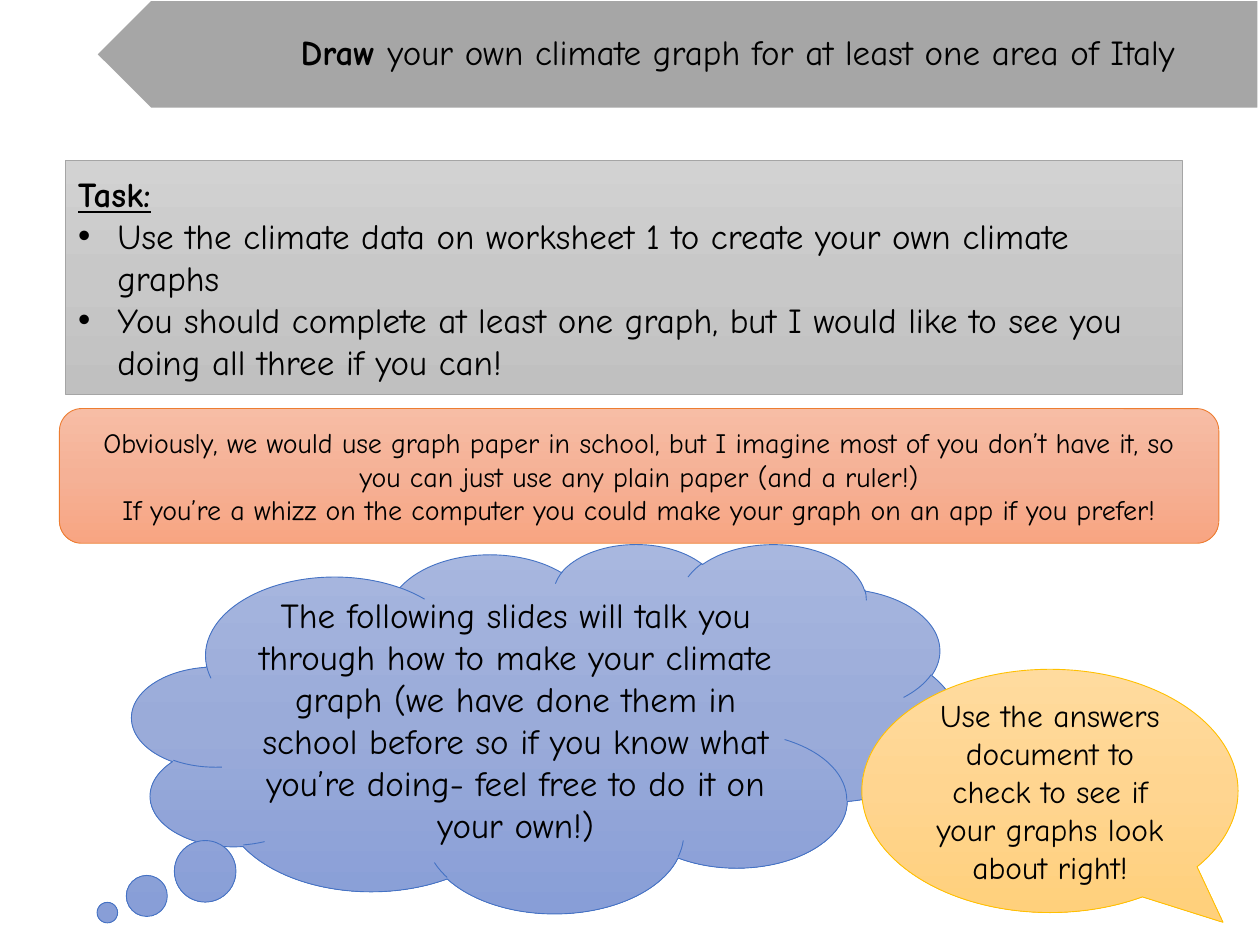
from copy import deepcopy

from lxml import etree
from pptx import Presentation
from pptx.dml.color import RGBColor
from pptx.enum import shapes, text
from pptx.oxml import ns
from pptx.util import Pt

FONT = "Comic Neue"
BLACK = RGBColor(0x00, 0x00, 0x00)
WHITE = RGBColor(0xFF, 0xFF, 0xFF)
BANNER_GREY = RGBColor(0xA6, 0xA6, 0xA6)
GREY_LINE = RGBColor(0xA5, 0xA5, 0xA5)
GREY_STOPS = (RGBColor(0xD2, 0xD2, 0xD2), RGBColor(0xC8, 0xC8, 0xC8), RGBColor(0xC0, 0xC0, 0xC0))
BLUE_LINE = RGBColor(0x44, 0x72, 0xC4)
BLUE_STOPS = (RGBColor(0xA8, 0xB7, 0xDF), RGBColor(0x9A, 0xAB, 0xD9), RGBColor(0x88, 0x9E, 0xD7))
ORANGE_LINE = RGBColor(0xED, 0x7D, 0x31)
ORANGE_STOPS = (RGBColor(0xF7, 0xBD, 0xA5), RGBColor(0xF5, 0xB1, 0x96), RGBColor(0xF8, 0xA5, 0x82))
GOLD_LINE = RGBColor(0xFF, 0xC0, 0x00)
GOLD_STOPS = (RGBColor(0xFF, 0xDB, 0x9E), RGBColor(0xFF, 0xD5, 0x90), RGBColor(0xFF, 0xD0, 0x7C))


def add_run(paragraph, words, size, bold=False, underline=False):
    run = paragraph.add_run()
    run.text = words
    font = run.font
    font.name, font.size, font.bold, font.underline = FONT, Pt(size), bold, underline
    font.color.rgb = BLACK


def add_panel(slide, preset, box, line, line_width=0.5):
    panel = slide.shapes.add_shape(preset, *map(Pt, box))
    panel.shadow.inherit = False
    panel.line.color.rgb = line
    panel.line.width = Pt(line_width)
    return panel


def shade(panel, colours):
    panel.fill.gradient()
    panel.fill.gradient_angle = 270
    first = panel.element.find(".//" + ns.qn("a:gs"))
    first.addnext(deepcopy(first))
    for stop, position, colour in zip(panel.fill.gradient_stops, (0, 0.5, 1), colours):
        stop.position = position
        stop.color.rgb = colour


def write_lines(panel, lines, size):
    frame = panel.text_frame
    frame.word_wrap = True
    frame.vertical_anchor = text.MSO_ANCHOR.MIDDLE
    for index, words in enumerate(lines):
        paragraph = frame.add_paragraph() if index else frame.paragraphs[0]
        paragraph.alignment = text.PP_ALIGN.CENTER
        add_run(paragraph, words, size)


def add_bullet(paragraph):
    properties = paragraph._p.get_or_add_pPr()
    properties.set("marL", str(Pt(22.5)))
    properties.set("indent", str(Pt(-22.5)))
    etree.SubElement(properties, ns.qn("a:buFont")).set("typeface", "Arial")
    etree.SubElement(properties, ns.qn("a:buChar")).set("char", "•")


def add_banner(slide):
    arrow = add_panel(slide, shapes.MSO_SHAPE.PENTAGON, (55, 0, 664, 62), WHITE, 1)
    arrow.rotation = 180
    arrow.fill.solid()
    arrow.fill.fore_color.rgb = BANNER_GREY

    title = slide.shapes.title
    title.element.addprevious(arrow.element)
    title.left, title.top, title.width, title.height = map(Pt, (93, 0, 625, 62))
    frame = title.text_frame
    frame.auto_size = text.MSO_AUTO_SIZE.NONE
    frame.word_wrap = True
    frame.vertical_anchor = text.MSO_ANCHOR.MIDDLE
    frame.margin_left, frame.margin_right = Pt(46), Pt(13.7)
    frame.margin_top = frame.margin_bottom = Pt(7)
    heading = frame.paragraphs[0]
    heading.alignment = text.PP_ALIGN.CENTER
    heading.line_spacing = 0.9
    add_run(heading, "Draw ", 20, bold=True)
    add_run(heading, "your own climate graph for at least one area of Italy", 20)


def add_task(slide, steps):
    task = add_panel(slide, shapes.MSO_SHAPE.RECTANGLE, (37.5, 91.5, 638, 134), GREY_LINE)
    shade(task, GREY_STOPS)
    frame = task.text_frame
    frame.word_wrap = True
    frame.vertical_anchor = text.MSO_ANCHOR.MIDDLE
    heading = frame.paragraphs[0]
    heading.alignment = text.PP_ALIGN.LEFT
    add_run(heading, "Task:", 20, bold=True, underline=True)
    for step in steps:
        paragraph = frame.add_paragraph()
        paragraph.alignment = text.PP_ALIGN.LEFT
        add_bullet(paragraph)
        add_run(paragraph, step, 20)


def add_note(slide, preset, box, line, colours, lines, size, tail=()):
    note = add_panel(slide, preset, box, line)
    for index, offset in enumerate(tail):
        note.adjustments[index] = offset
    shade(note, colours)
    write_lines(note, lines, size)


def main():
    deck = Presentation()
    deck.slide_width, deck.slide_height = Pt(720), Pt(540)
    slide = deck.slides.add_slide(deck.slide_layouts[5])

    add_banner(slide)
    add_task(slide, (
        "Use the climate data on worksheet 1 to create your own climate graphs",
        "You should complete at least one graph, but I would like to see you "
        "doing all three if you can!",
    ))
    add_note(
        slide, shapes.MSO_SHAPE.CLOUD_CALLOUT, (75.5, 310.5, 472, 211), BLUE_LINE, BLUE_STOPS,
        ["The following slides will talk you through how to make your climate graph "
         "(we have done them in school before so if you know what you’re doing- "
         "feel free to do it on your own!)"],
        20, tail=(-0.53, 0.5))
    add_note(
        slide, shapes.MSO_SHAPE.ROUNDED_RECTANGLE, (34, 233.5, 662.5, 77), ORANGE_LINE, ORANGE_STOPS,
        ["Obviously, we would use graph paper in school, but I imagine most of you "
         "don’t have it, so you can just use any plain paper (and a ruler!)",
         "If you’re a whizz on the computer you could make your graph on an app if you prefer!"],
        16)
    add_note(
        slide, shapes.MSO_SHAPE.OVAL_CALLOUT, (492.5, 382.5, 215, 139), GOLD_LINE, GOLD_STOPS,
        ["Use the answers document to check to see if your graphs look about right!"],
        18, tail=(0.46, 0.54))

    deck.save("out.pptx")


if __name__ == "__main__":
    main()
